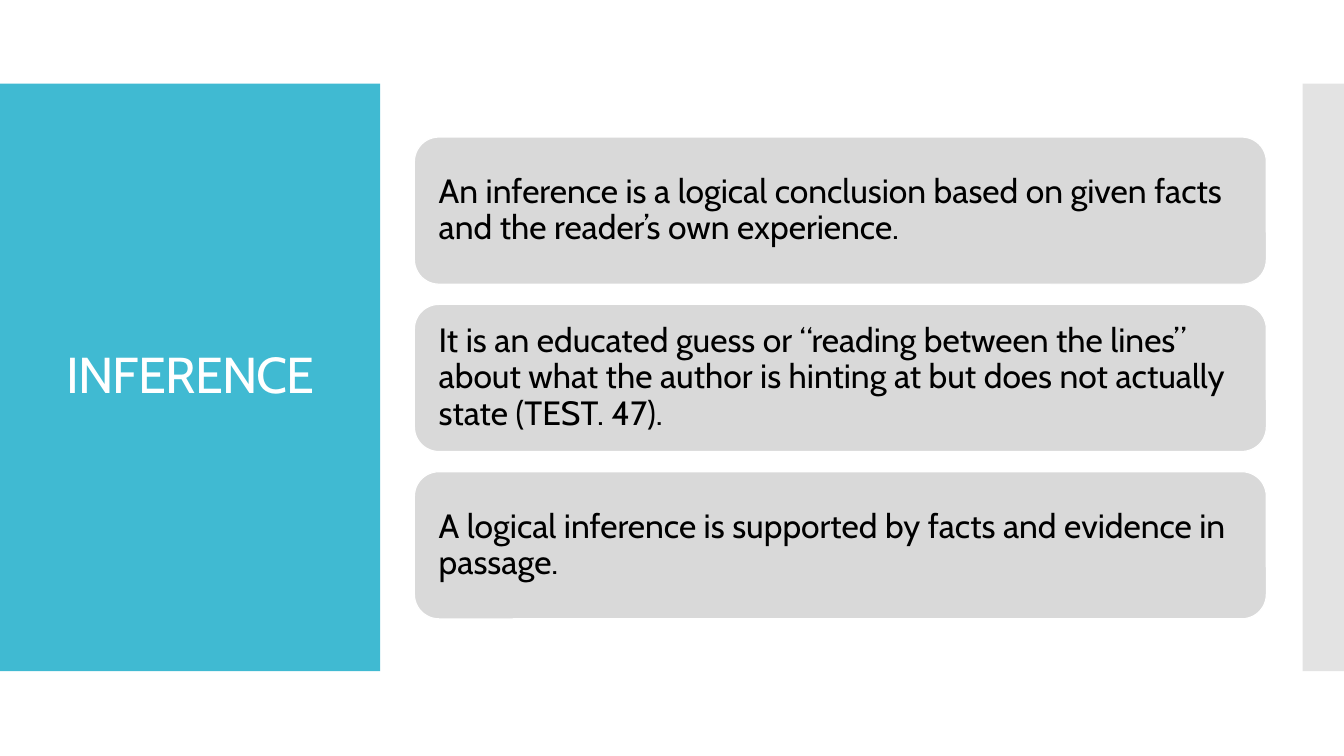
import pptx
import pptx.dml.color
import pptx.enum.shapes
import pptx.enum.text
import pptx.oxml
import pptx.oxml.ns
import pptx.util
from pptx.util import Inches

TITLE = "INFERENCE"
CARDS = [
    "An inference is a logical conclusion based on given facts and the reader’s own experience.",
    "It is an educated guess or “reading between the lines” about what the author is hinting at "
    "but does not actually state (TEST. 47).",
    "A logical inference is supported by facts and evidence in passage.",
]
FONT = "Cabin"
TEAL, SILVER, CARD_GREY, WHITE, BLACK = "40BAD2", "C8C8C8", "D9D9D9", "FFFFFF", "000000"
BAND_TOP, BAND_HEIGHT = 0.83, 5.83
CARD_LEFT, CARD_TOP, CARD_WIDTH, CARD_HEIGHT, CARD_GAP = 4.11, 1.36, 8.45, 1.46, 0.2
CARD_INSET = 0.17

SHAPES = pptx.enum.shapes.MSO_SHAPE
ALIGN = pptx.enum.text.PP_ALIGN


def rgb(value):
    return pptx.dml.color.RGBColor.from_string(value)


def add_box(slide, kind, left, top, width, height, fill, line=None, alpha=None):
    """Add a filled shape; alpha is its opacity in percent."""
    sp = slide.shapes.add_shape(kind, Inches(left), Inches(top), Inches(width), Inches(height))
    sp.shadow.inherit = False
    sp.fill.solid()
    sp.fill.fore_color.rgb = rgb(fill)
    if alpha is not None:
        color = sp.element.spPr.find(".//" + pptx.oxml.ns.qn("a:srgbClr"))
        color.append(pptx.oxml.parse_xml(
            f'<a:alpha {pptx.oxml.ns.nsdecls("a")} val="{alpha * 1000}"/>'))
    if line:
        sp.line.color.rgb = rgb(line)
        sp.line.width = pptx.util.Pt(0.85)
    else:
        sp.line.fill.background()
    return sp


def write(sp, text, size, color, align=ALIGN.LEFT, inset=0.1, spacing=None):
    """Fill the shape with one paragraph; spacing is between letters, in points."""
    tf = sp.text_frame
    tf.word_wrap = True
    tf.auto_size = pptx.enum.text.MSO_AUTO_SIZE.NONE
    tf.vertical_anchor = pptx.enum.text.MSO_ANCHOR.MIDDLE
    tf.margin_left = tf.margin_right = tf.margin_top = tf.margin_bottom = Inches(inset)
    p = tf.paragraphs[0]
    p.alignment = align
    p.line_spacing = 0.9
    r = p.add_run()
    r.text = text
    r.font.name = FONT
    r.font.size = pptx.util.Pt(size)
    r.font.color.rgb = rgb(color)
    if spacing is not None:
        r.font._element.set("spc", str(round(spacing * 100)))


def main():
    prs = pptx.Presentation()
    prs.slide_width, prs.slide_height = Inches(13.33), Inches(7.5)
    slide = prs.slides.add_slide(prs.slide_layouts[5])

    title = slide.shapes.title
    title.left, title.top = Inches(0.28), Inches(1.23)
    title.width, title.height = Inches(3.22), Inches(5.03)
    write(title, TITLE, 36, WHITE, align=ALIGN.CENTER, spacing=-0.6)

    panel = add_box(slide, SHAPES.RECTANGLE, 0, BAND_TOP, 3.77, BAND_HEIGHT, TEAL)
    edge = add_box(slide, SHAPES.RECTANGLE, 12.92, BAND_TOP, 0.41, BAND_HEIGHT, SILVER, alpha=50)
    for band in (panel, edge):
        title.element.addprevious(band.element)  # keeps the title in front

    for i, text in enumerate(CARDS):
        top = CARD_TOP + i * (CARD_HEIGHT + CARD_GAP)
        card = add_box(slide, SHAPES.ROUNDED_RECTANGLE, CARD_LEFT, top, CARD_WIDTH, CARD_HEIGHT,
                       CARD_GREY, line=WHITE)
        write(card, text, 24, BLACK, inset=CARD_INSET)

    prs.save("out.pptx")


if __name__ == "__main__":
    main()
